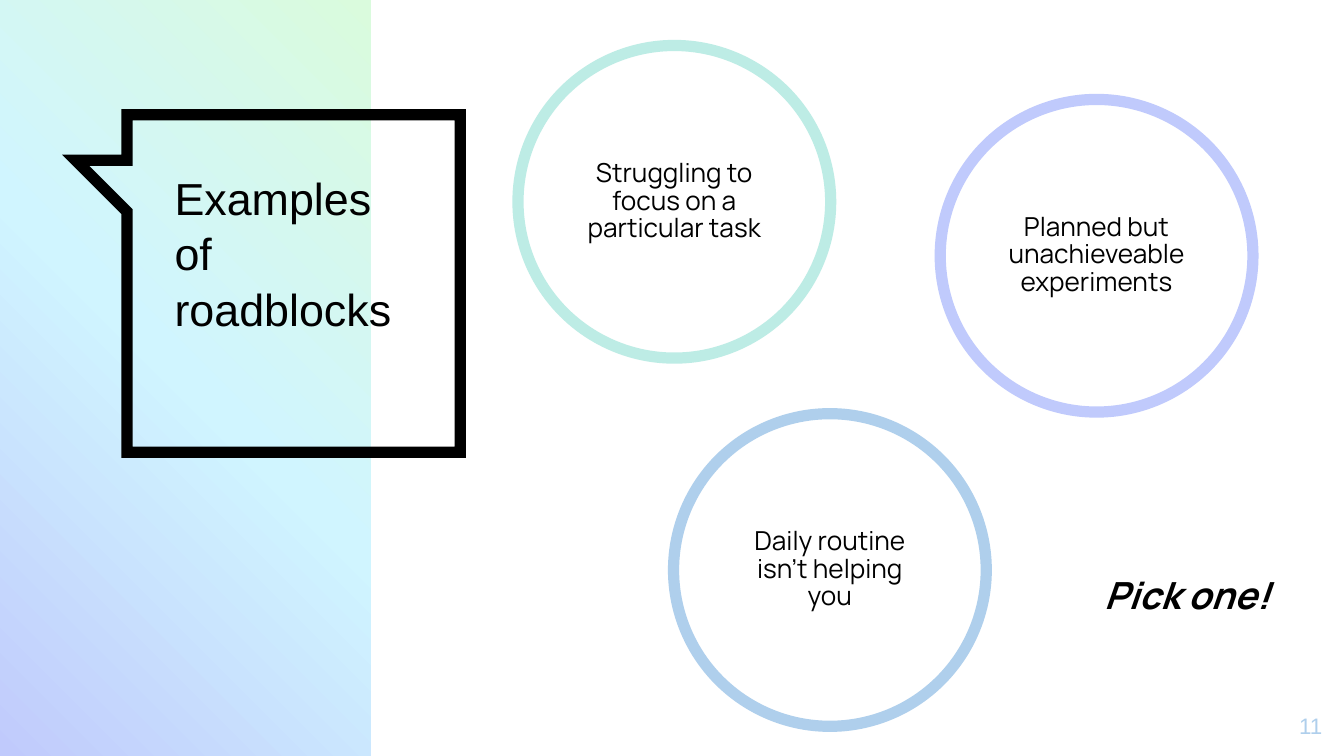
from copy import deepcopy

from lxml import etree
from pptx import Presentation
from pptx.dml.color import RGBColor
from pptx.enum.shapes import MSO_SHAPE
from pptx.enum.text import MSO_ANCHOR, PP_ALIGN
from pptx.oxml.ns import qn
from pptx.util import Cm, Pt

RECT, OVAL = MSO_SHAPE.RECTANGLE, MSO_SHAPE.OVAL
TOP, MIDDLE = MSO_ANCHOR.TOP, MSO_ANCHOR.MIDDLE
LEFT, CENTER, RIGHT = PP_ALIGN.LEFT, PP_ALIGN.CENTER, PP_ALIGN.RIGHT

COLORS = {
    "black": "000000",
    "lavender": "C0CAFC",
    "sky": "D0F5FF",
    "lime": "DAFBDD",
    "blue": "AFCFEC",
    "mint": "BDECE5",
}
TITLE_FONT, BODY_FONT = "Arial", "Manrope"
OUTLINE = Pt(6)
CIRCLE_SIZE = 5.91
CIRCLES = [
    (12.73, 7.82, "blue", "Daily routine isn’t helping you"),
    (9.79, 0.86, "mint", "Struggling to focus on a particular task"),
    (17.77, 1.88, "lavender", "Planned but unachieveable experiments"),
]


def rgb(name):
    """Return the named colour."""
    return RGBColor.from_string(COLORS[name])


def set_text(sp, text, size, font, color="black", align=LEFT, anchor=TOP,
             inset=0.25, spacing=None, bold=False, italic=False):
    """Fill a shape with one styled paragraph."""
    tf = sp.text_frame
    tf.word_wrap = True
    tf.vertical_anchor = anchor
    tf.margin_left = tf.margin_right = Cm(0.25)
    tf.margin_top = tf.margin_bottom = Cm(inset)
    p = tf.paragraphs[0]
    p.alignment = align
    if spacing:
        p.line_spacing = spacing
    r = p.add_run()
    r.text = text
    r.font.size = Pt(size)
    r.font.name = font
    r.font.bold, r.font.italic = bold, italic
    r.font.color.rgb = rgb(color)


def add_text(s, x, y, w, h, text, size, font, **style):
    """Place a text box in the given box."""
    sp = s.shapes.add_textbox(Cm(x), Cm(y), Cm(w), Cm(h))
    set_text(sp, text, size, font, **style)


def set_outline(sp, color):
    """Leave a shape unfilled with a thick outline."""
    sp.shadow.inherit = False
    sp.fill.background()
    sp.line.color.rgb = rgb(color)
    sp.line.width = OUTLINE


def add_side_panel(s, x, y, w, h):
    """Draw the diagonal gradient panel."""
    sp = s.shapes.add_shape(RECT, Cm(x), Cm(y), Cm(w), Cm(h))
    sp.shadow.inherit = False
    sp.line.fill.background()
    sp.fill.gradient()
    sp.fill.gradient_angle = 45
    stops = sp.fill.gradient_stops
    gs_lst = sp.element.spPr.find(qn("a:gradFill")).find(qn("a:gsLst"))
    gs_lst.insert(1, deepcopy(gs_lst[0]))
    stops = sp.fill.gradient_stops
    for stop, pos, color in zip(stops, (0, 0.5, 1), ("lavender", "sky", "lime")):
        stop.position = pos
        stop.color.rgb = rgb(color)


def add_title_callout(s, x, y, w, h):
    """Draw the speech-bubble outline with the slide title."""
    tail, notch, tip = 0.97, 1.83, 0.86
    right, bottom = x + w, y + h
    body = x + tail
    points = [(right, y), (right, bottom), (body, bottom),
              (body, y + notch), (x, y + tip), (body, y + tip)]
    fb = s.shapes.build_freeform(Cm(body), Cm(y))
    fb.add_line_segments([(Cm(px), Cm(py)) for px, py in points], close=True)
    sp = fb.convert_to_shape()
    set_outline(sp, "black")
    ln = sp.element.spPr.find(qn("a:ln"))
    etree.SubElement(ln, qn("a:miter"), lim="800000")
    add_text(s, x + 1.62, y + 0.76, 5.08, 5.31, "Examples of roadblocks",
             24, TITLE_FONT, spacing=1.04)


def add_circle(s, x, y, size, color, text):
    """Draw one roadblock ring with its text."""
    sp = s.shapes.add_shape(OVAL, Cm(x), Cm(y), Cm(size), Cm(size))
    set_outline(sp, color)
    set_text(sp, text, 14, BODY_FONT, align=CENTER, anchor=MIDDLE, spacing=0.88)


def main():
    """Build and save the slide."""
    prs = Presentation()
    prs.slide_width, prs.slide_height = Cm(25.4), Cm(14.29)
    s = prs.slides.add_slide(prs.slide_layouts[6])
    add_side_panel(s, 0, 0, 7.01, 14.29)
    add_title_callout(s, 1.43, 2.17, 7.27, 6.38)
    for x, y, color, text in CIRCLES:
        add_circle(s, x, y, CIRCLE_SIZE, color, text)
    add_text(s, 23.72, 13.18, 1.52, 1.09, "11", 12, TITLE_FONT,
             color="blue", align=RIGHT, anchor=MIDDLE)
    add_text(s, 20.62, 10.69, 4.09, 1.12, "Pick one!", 20, BODY_FONT,
             inset=0.13, bold=True, italic=True)
    prs.save("out.pptx")


if __name__ == "__main__":
    main()
